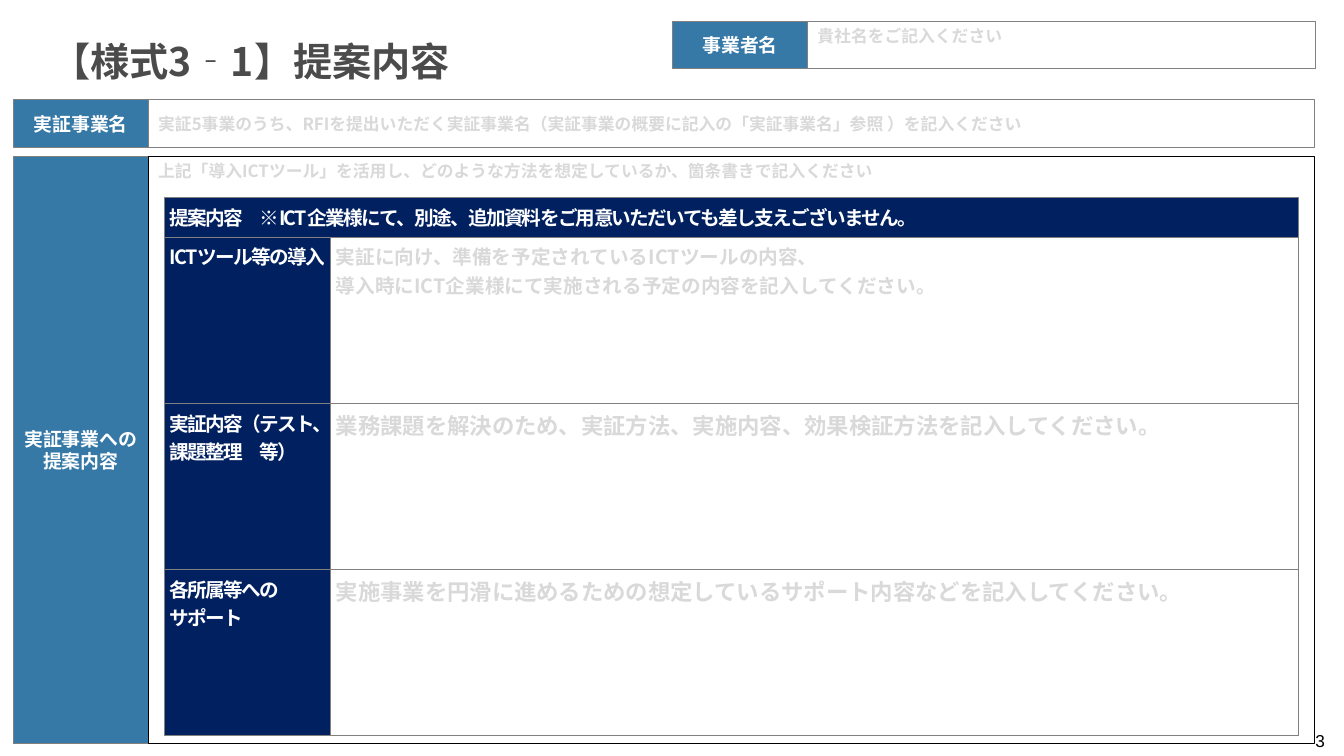
from dataclasses import dataclass
from typing import Any, Optional

from lxml.etree import SubElement as Sub
from pptx import Presentation
from pptx.dml.color import RGBColor as Rgb
from pptx.enum.shapes import MSO_SHAPE as Kind
from pptx.enum.text import MSO_ANCHOR as Anchor, PP_ALIGN as Align
from pptx.oxml.ns import qn
from pptx.util import Emu, Inches, Pt


@dataclass(frozen=True)
class Theme:
    font: str = "Noto Sans CJK JP"
    plain: str = "Arial"
    blue: str = "045890"
    navy: str = "002060"
    white: str = "FFFFFF"
    black: str = "000000"
    gray: str = "808080"
    hint: str = "D9D9D9"
    dark: str = "4B4B4B"
    head: float = 28
    large: float = 16
    cell: float = 14
    label: float = 13.5
    note: float = 12
    page: float = 12.3
    thin: float = 0.5


@dataclass(frozen=True)
class Style:
    size: float
    color: str
    font: str = Theme.font
    bold: bool = True
    track: int = 0
    align: Any = Align.LEFT
    pitch: Optional[float] = None


@dataclass(frozen=True)
class Area:
    x: float
    y: float
    w: float
    h: float


@dataclass(frozen=True)
class Box:
    area: Area
    text: str
    style: Style
    fill: Optional[str] = None
    alpha: Optional[int] = None
    line: Optional[str] = None
    width: float = Theme.thin
    anchor: Any = Anchor.MIDDLE
    inset: tuple[float, float] = (0.1, 0.05)


@dataclass(frozen=True)
class Row:
    label: str
    hint: str
    size: float = Theme.large


WIDE, HIGH = Inches(13.33), Inches(7.5)
T = Theme()
LABEL = Style(T.label, T.white, align=Align.CENTER)
NOTE = Style(T.note, T.hint)
HEAD = Style(T.cell, T.white, track=-120)
TITLE = Style(T.head, T.dark, pitch=0.9)
PAGE = Style(T.page, T.black, T.plain, False, align=Align.RIGHT)

SIDE, TAB, BODY = 0.98, 10.05, 86.8
MAIN = SIDE + TAB
NAME, BAR = 50.04, 6.27
TOP, MID, LOW, DEEP = 2.8, 13.2, 20.67, 77.73
COLS = (12.38, 72.02)
CAP, STEP = 5.2, 22

BANNER = "提案内容　※ICT企業様にて、別途、追加資料をご用意いただいても差し支えございません。"
ROWS = [
    Row("ICTツール等の導入",
        "実証に向け、準備を予定されているICTツールの内容、\v導入時にICT企業様にて実施される予定の内容を記入してください。",
        T.cell),
    Row("実証内容（テスト、課題整理　等）",
        "業務課題を解決のため、実証方法、実施内容、効果検証方法を記入してください。"),
    Row("各所属等への\nサポート",
        "実施事業を円滑に進めるための想定しているサポート内容などを記入してください。"),
]


def label(area: Area, text: str) -> Box:
    return Box(area, text, LABEL, T.blue, 80, T.gray)


PANELS = [
    label(Area(SIDE, LOW, TAB, DEEP), "実証事業への\n提案内容"),
    Box(Area(MAIN, LOW, BODY, DEEP),
        "上記「導入ICTツール」を活用し、どのような方法を想定しているか、箇条書きで記入ください",
        NOTE, T.white, line=T.black, anchor=Anchor.TOP),
]
FIELDS = [
    Box(Area(MAIN, MID, BODY, BAR),
        "実証5事業のうち、RFIを提出いただく実証事業名（実証事業の概要に記入の「実証事業名」参照 ）を記入ください",
        NOTE, line=T.gray, width=0.75),
    label(Area(SIDE, MID, TAB, BAR), "実証事業名"),
    label(Area(NAME, TOP, TAB, BAR), "事業者名"),
    Box(Area(NAME + TAB, TOP, 37.81, BAR), "貴社名をご記入ください",
        NOTE, T.white, line=T.gray, anchor=Anchor.TOP),
]
NUMBER = Box(Area(93.85, 95.6, 5.63, 4.67), "3", PAGE, inset=(0.12, 0.06))
HEADING = Box(Area(3.08, 5.33, 93.85, 6.53), "【様式3‐1】提案内容", TITLE, anchor=Anchor.BOTTOM)


def across(share: float) -> Emu:
    return Emu(round(WIDE * share / 100))


def down(share: float) -> Emu:
    return Emu(round(HIGH * share / 100))


def place(area: Area) -> tuple[Emu, Emu, Emu, Emu]:
    return across(area.x), down(area.y), across(area.w), down(area.h)


def apply(target: Any, values: dict[str, Any]) -> None:
    for key, value in values.items():
        setattr(target, key, value)


def margins(x: float, y: float) -> dict[str, Any]:
    return {"margin_left": Inches(x), "margin_right": Inches(x),
            "margin_top": Inches(y), "margin_bottom": Inches(y)}


def write(frame: Any, text: str, style: Style) -> None:
    frame.text = text
    for para in frame.paragraphs:
        apply(para, {"alignment": style.align, "line_spacing": style.pitch})
        for run in para.runs:
            apply(run.font, {"name": style.font, "size": Pt(style.size), "bold": style.bold})
            run.font.color.rgb = Rgb.from_string(style.color)
            props = run._r.get_or_add_rPr()
            props.set("spc", str(style.track))
            Sub(props, qn("a:ea"), typeface=style.font)


def draw(slide: Any, box: Box) -> None:
    if box.line:
        shape = slide.shapes.add_shape(Kind.RECTANGLE, *place(box.area))
        shape.shadow.inherit = False
        shape.line.color.rgb = Rgb.from_string(box.line)
        shape.line.width = Pt(box.width)
    else:
        shape = slide.shapes.add_textbox(*place(box.area))
    if box.fill:
        shape.fill.solid()
        shape.fill.fore_color.rgb = Rgb.from_string(box.fill)
    else:
        shape.fill.background()
    if box.alpha:
        tint = shape._element.spPr.find(qn("a:solidFill"))[0]
        Sub(tint, qn("a:alpha"), val=str(box.alpha * 1000))
    apply(shape.text_frame, {"word_wrap": True, "vertical_anchor": box.anchor,
                             **margins(*box.inset)})
    write(shape.text_frame, box.text, box.style)


def paint(cell: Any, fill: str) -> None:
    props = cell._tc.get_or_add_tcPr()
    for side in ("lnL", "lnR", "lnT", "lnB"):
        edge = Sub(props, qn(f"a:{side}"), w=str(Pt(T.thin)))
        Sub(Sub(edge, qn("a:solidFill")), qn("a:srgbClr"), val=T.gray)
    cell.fill.solid()
    cell.fill.fore_color.rgb = Rgb.from_string(fill)
    apply(cell, margins(0.05, 0.05))


def fill_in(slide: Any, rows: list[Row]) -> None:
    area = Area(12.23, 26.13, sum(COLS), CAP + STEP * len(rows))
    grid = slide.shapes.add_table(len(rows) + 1, len(COLS), *place(area)).table
    apply(grid, {"first_row": False, "horz_banding": False})
    for col, share in zip(grid.columns, COLS):
        col.width = across(share)
    for row, share in zip(grid.rows, [CAP] + [STEP] * len(rows)):
        row.height = down(share)
    for col in range(len(COLS)):
        paint(grid.cell(0, col), T.navy)
    grid.cell(0, 0).merge(grid.cell(0, 1))
    write(grid.cell(0, 0).text_frame, BANNER, HEAD)
    for at, row in enumerate(rows, 1):
        left, right = grid.cell(at, 0), grid.cell(at, 1)
        paint(left, T.navy)
        paint(right, T.white)
        write(left.text_frame, row.label, HEAD)
        write(right.text_frame, row.hint, Style(row.size, T.hint))


def main() -> None:
    deck = Presentation()
    apply(deck, {"slide_width": WIDE, "slide_height": HIGH})
    slide = deck.slides.add_slide(deck.slide_layouts[6])
    for box in [NUMBER, *PANELS]:
        draw(slide, box)
    fill_in(slide, ROWS)
    for box in [HEADING, *FIELDS]:
        draw(slide, box)
    deck.save("out.pptx")


if __name__ == "__main__":
    main()
